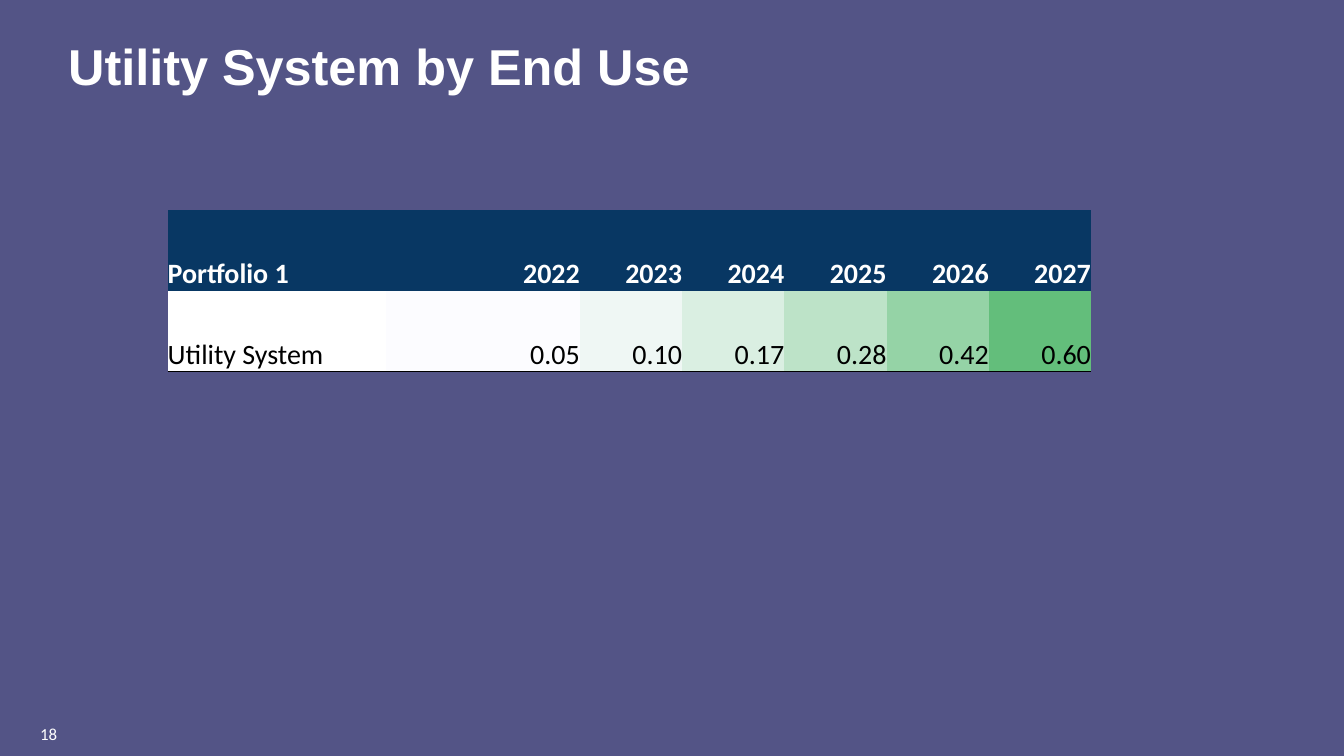
from lxml import etree
from pptx import Presentation
from pptx import util as u
from pptx.dml.color import RGBColor
from pptx.enum import text
from pptx.oxml import ns

COLORS = {
    "background": "535486",
    "header": "083763",
    "light": "FFFFFF",
    "dark": "000000",
}
YEARS = ["2022", "2023", "2024", "2025", "2026", "2027"]
SAVINGS = ["0.05", "0.10", "0.17", "0.28", "0.42", "0.60"]
SCALE = ["FCFCFF", "EFF7F4", "DAEFE2", "BDE3C8", "95D3A6", "63BE7B"]
COLUMN_WIDTHS = [4.12, 3.66] + [1.93] * 5
PLAIN_STYLE = "{2D5ABB26-0587-4C30-8999-92F81FD0307C}"


def write_text(frame, content, size=15, font="Calibri", color="light", bold=False,
               align=text.PP_ALIGN.LEFT):
    """Write one formatted paragraph into a text frame."""
    paragraph = frame.paragraphs[0]
    paragraph.alignment = align
    run = paragraph.add_run()
    run.text = content
    run.font.size = u.Pt(size)
    run.font.name = font
    run.font.bold = bold
    run.font.color.rgb = RGBColor.from_string(COLORS[color])


def add_label(slide, box, content, anchor=text.MSO_ANCHOR.TOP, **formatting):
    """Add a wrapped text box in the given box."""
    shape = slide.shapes.add_textbox(*map(u.Cm, box))
    shape.text_frame.word_wrap = True
    shape.text_frame.vertical_anchor = anchor
    write_text(shape.text_frame, content, **formatting)


def add_bottom_border(cell, color, width):
    """Draw a solid line under a table cell."""
    line = etree.Element(ns.qn("a:lnB"), w=str(u.Pt(width)))
    fill = etree.SubElement(line, ns.qn("a:solidFill"))
    etree.SubElement(fill, ns.qn("a:srgbClr"), val=COLORS[color])
    cell._tc.get_or_add_tcPr().insert(0, line)


def fill_cell(cell, content, fill, **formatting):
    """Fill a table cell and set its text against the bottom edge."""
    cell.margin_left = cell.margin_right = cell.margin_top = cell.margin_bottom = 0
    cell.vertical_anchor = text.MSO_ANCHOR.BOTTOM
    cell.fill.solid()
    cell.fill.fore_color.rgb = RGBColor.from_string(fill)
    write_text(cell.text_frame, content, **formatting)


def add_savings_table(slide, box):
    """Add the table of yearly values, shaded by size, in the given box."""
    table = slide.shapes.add_table(2, len(COLUMN_WIDTHS), *map(u.Cm, box)).table
    table.first_row = table.horz_banding = False
    table._tbl.tblPr.find(ns.qn("a:tableStyleId")).text = PLAIN_STYLE
    scale = box[2] / sum(COLUMN_WIDTHS)
    for column, width in zip(table.columns, COLUMN_WIDTHS):
        column.width = u.Cm(width * scale)

    headings = ["Portfolio 1"] + YEARS
    values = ["Utility System"] + SAVINGS
    fills = [COLORS["light"]] + SCALE
    for index, (heading, value, fill) in enumerate(zip(headings, values, fills)):
        align = text.PP_ALIGN.RIGHT if index else text.PP_ALIGN.LEFT
        fill_cell(table.cell(0, index), heading, COLORS["header"], bold=True, align=align)
        fill_cell(table.cell(1, index), value, fill, color="dark", align=align)
        add_bottom_border(table.cell(1, index), "dark", 0.5)


def build_slide(presentation):
    """Build the end use slide."""
    slide = presentation.slides.add_slide(presentation.slide_layouts[6])
    slide.background.fill.solid()
    slide.background.fill.fore_color.rgb = RGBColor.from_string(COLORS["background"])
    add_label(slide, (0.51, 13.56, 1.9, 0.64), "18", size=9)
    add_label(slide, (1.04, 0.13, 24.1, 2.21), "Utility System by End Use",
              anchor=text.MSO_ANCHOR.MIDDLE, size=27, font="Arial", bold=True)
    add_savings_table(slide, (3.17, 3.96, 17.45, 3.07))


def main():
    """Create and save the presentation."""
    presentation = Presentation()
    presentation.slide_width = u.Cm(25.4)
    presentation.slide_height = u.Cm(14.29)
    build_slide(presentation)
    presentation.save("out.pptx")


if __name__ == "__main__":
    main()
